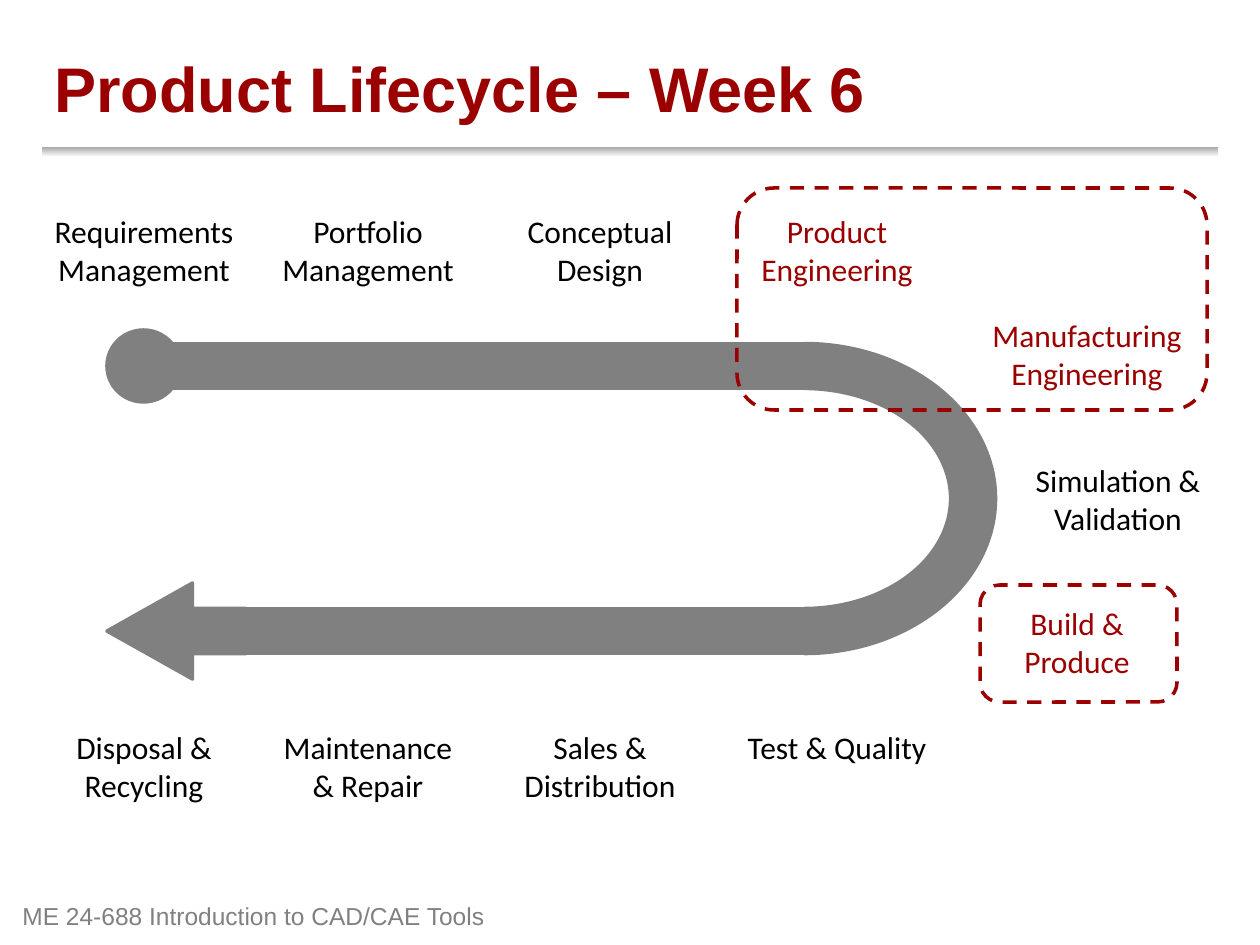
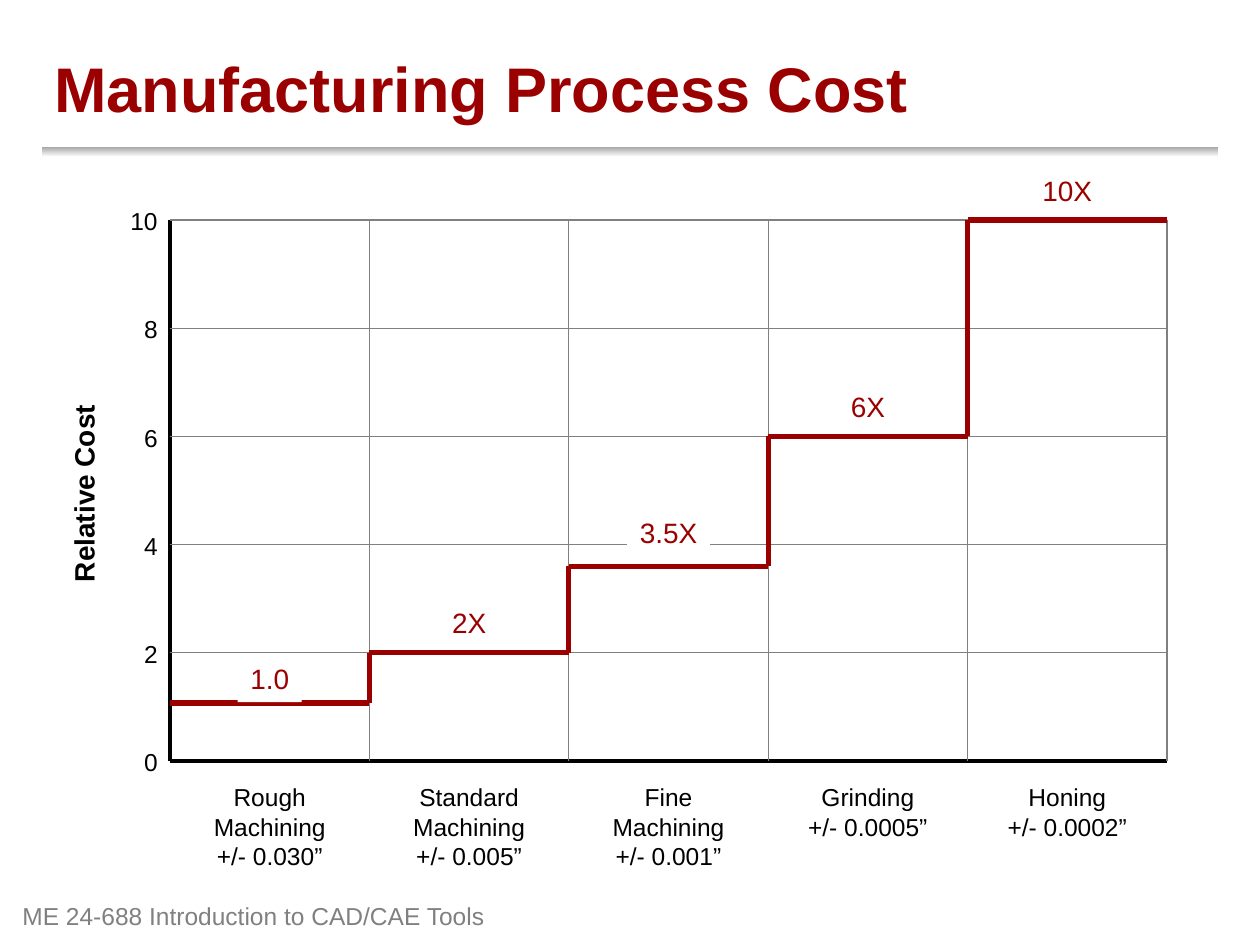
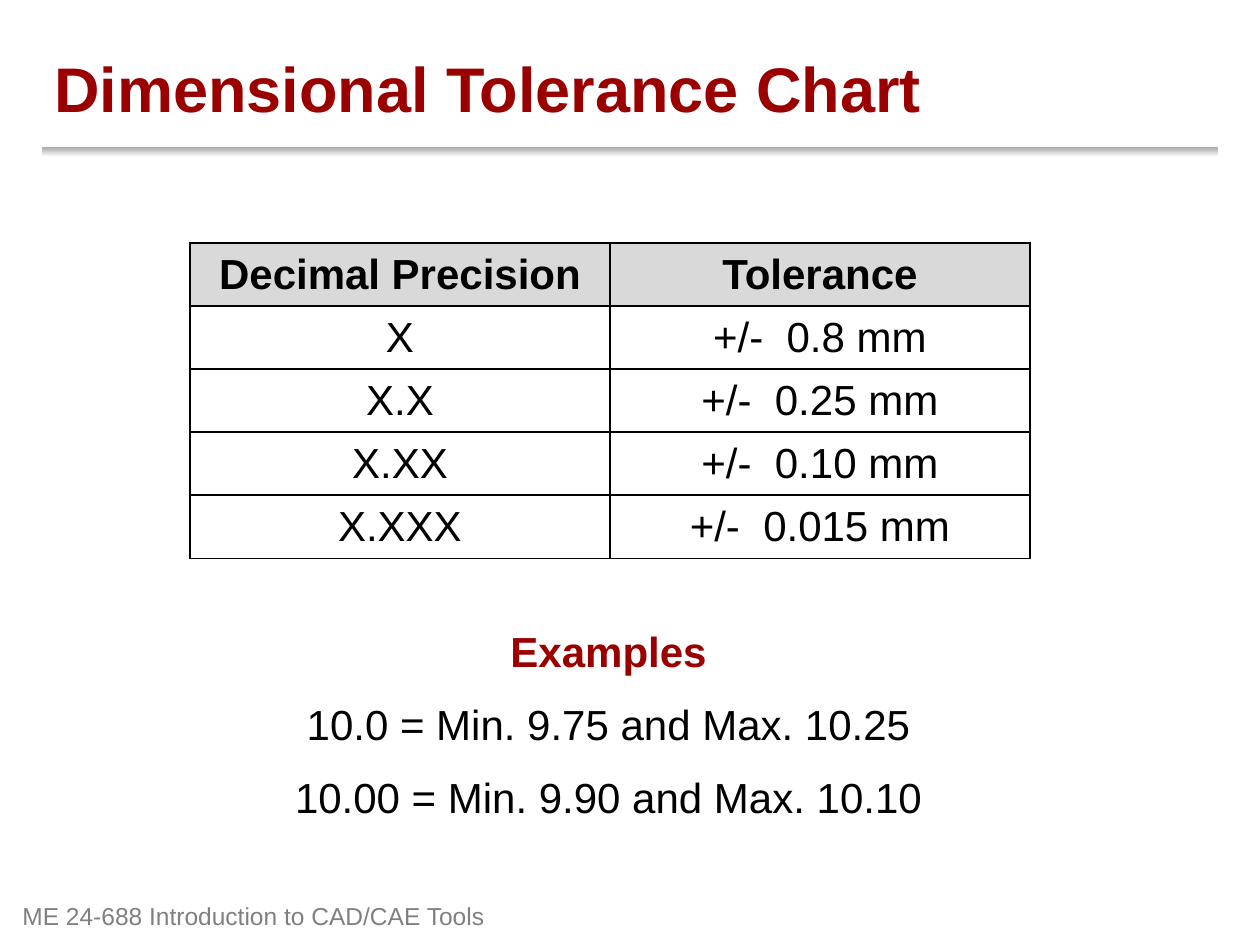
from collections import namedtuple

from lxml import etree
from pptx import Presentation
from pptx.dml.color import RGBColor
from pptx.enum.dml import MSO_LINE
from pptx.enum.shapes import MSO_CONNECTOR, MSO_SHAPE
from pptx.enum.text import MSO_ANCHOR, PP_ALIGN
from pptx.oxml.ns import qn
from pptx.util import Emu, Pt

RECTANGLE = MSO_SHAPE.RECTANGLE
ROUNDED = MSO_SHAPE.ROUNDED_RECTANGLE
OVAL = MSO_SHAPE.OVAL
BLOCK_ARC = MSO_SHAPE.BLOCK_ARC
RIGHT_ARROW = MSO_SHAPE.RIGHT_ARROW
STRAIGHT = MSO_CONNECTOR.STRAIGHT
DASH = MSO_LINE.DASH
LEFT, CENTER, RIGHT = PP_ALIGN.LEFT, PP_ALIGN.CENTER, PP_ALIGN.RIGHT
TOP, MIDDLE = MSO_ANCHOR.TOP, MSO_ANCHOR.MIDDLE

PX_PER_INCH = 126
RED, GRAY, BLACK, WHITE = "9A0000", "808080", "000000", "FFFFFF"
BAND_GRAY, HEADER_GRAY = "A6A6A6", "D9D9D9"

TITLE = {"name": "Arial", "size": Pt(36), "bold": True}
FOOTER = {"name": "Arial", "size": Pt(14)}
STAGE = {"name": "Calibri", "size": Pt(18)}
AXIS_TITLE = {"name": "Arial", "size": Pt(16), "bold": True}
AXIS_LABEL = {"name": "Arial", "size": Pt(14)}
COST_LABEL = {"name": "Arial", "size": Pt(16)}
BODY = {"name": "Arial", "size": Pt(24), "bold": False}
HEADING = {**BODY, "bold": True}

Box = namedtuple("Box", "left top width height")

STAGE_COLUMNS = (109, 333, 565, 802)
TOP_STAGES = (
    ("Requirements Management", BLACK),
    ("Portfolio Management", BLACK),
    ("Conceptual Design", BLACK),
    ("Product Engineering", RED),
)
BOTTOM_STAGES = (
    ("Disposal & Recycling", BLACK),
    ("Maintenance & Repair", BLACK),
    ("Sales & Distribution", BLACK),
    ("Test & Quality", BLACK),
)
SIDE_STAGES = (
    ("Manufacturing Engineering", RED, 1052, 123),
    ("Simulation & Validation", BLACK, 1083, 268),
    ("Build & Produce", RED, 1042, 411),
)
TRACK_PARTS = (
    (RECTANGLE, Box(101, 157, 667, 44), 0, ()),
    (OVAL, Box(72, 143, 73, 72), 0, ()),
    (RECTANGLE, Box(199, 422, 570, 44), 0, ()),
    (BLOCK_ARC, Box(614, 120, 310, 383), 90, (108, 215.91, 0.145)),
    (RIGHT_ARROW, Box(72, 396, 139, 96), 180, (0.47, 0.89)),
)
HIGHLIGHTS = (Box(702, 1, 470, 222), Box(945, 398, 197, 117))

PROCESSES = (
    ("Rough Machining\n+/- 0.030”", "1.0", 1.07, 64, 48),
    ("Standard Machining\n+/- 0.005”", "2X", 2, 60, 53),
    ("Fine Machining\n+/- 0.001”", "3.5X", 3.6, 83, 57),
    ("Grinding\n+/- 0.0005”", "6X", 6, 60, 53),
    ("Honing\n+/- 0.0002”", "10X", 10, 76, 53),
)
MAX_COST, COST_STEP = 10, 2

TOLERANCES = (
    ("Decimal Precision", "Tolerance"),
    ("X", "+/-  0.8 mm"),
    ("X.X", "+/-  0.25 mm"),
    ("X.XX", "+/-  0.10 mm"),
    ("X.XXX", "+/-  0.015 mm"),
)
EXAMPLES = (
    ("Examples", HEADING, RED),
    ("10.0 = Min. 9.75 and Max. 10.25", BODY, BLACK),
    ("10.00 = Min. 9.90 and Max. 10.10", BODY, BLACK),
)


def px(length):
    return Emu(round(length * 914400 / PX_PER_INCH))


def color(hex_value):
    return RGBColor.from_string(hex_value)


def place(box):
    return [px(length) for length in box]


def inside(outer, part):
    return part._replace(left=outer.left + part.left, top=outer.top + part.top)


def write(para, text, style, hex_value, align):
    para.alignment = align
    span = para.add_run()
    span.text = text
    for name, value in style.items():
        setattr(span.font, name, value)
    span.font.color.rgb = color(hex_value)


def add_text(page, box, text, style, hex_value=BLACK, align=CENTER, anchor=TOP, wrap=True):
    shape = page.shapes.add_textbox(*place(box))
    frame = shape.text_frame
    frame.word_wrap = wrap
    frame.vertical_anchor = anchor
    for index, line in enumerate(text.split("\n")):
        para = frame.add_paragraph() if index else frame.paragraphs[0]
        write(para, line, style, hex_value, align)
    return shape


def add_preset(page, kind, box, line=None):
    shape = page.shapes.add_shape(kind, *place(box))
    shape.shadow.inherit = False
    if line:
        shape.line.color.rgb = color(line)
        shape.line.width = Pt(2)
    else:
        shape.line.fill.background()
    return shape


def add_line(page, start, end, hex_value, width):
    line = page.shapes.add_connector(STRAIGHT, *place(start + end))
    line.line.color.rgb = color(hex_value)
    line.line.width = Pt(width)
    etree.SubElement(line._element.spPr, qn("a:effectLst"))


def add_page(deck, title):
    page = deck.slides.add_slide(deck.slide_layouts[6])
    add_text(page, Box(10, 895, 490, 43), "ME 24-688 Introduction to CAD/CAE Tools",
             FOOTER, GRAY, LEFT, wrap=False)
    band = add_preset(page, RECTANGLE, Box(42, 147, 1176, 10))
    band.fill.gradient()
    band.fill.gradient_angle = 270
    for stop, hex_value in zip(band.fill.gradient_stops, (BAND_GRAY, WHITE)):
        stop.color.rgb = color(hex_value)
    add_text(page, Box(42, 38, 1176, 98), title, TITLE, RED, LEFT, MIDDLE)
    return page


def draw_stage(page, box, text, hex_value, center, top):
    add_text(page, inside(box, Box(center - 110, top, 220, 89)), text, STAGE, hex_value)


def draw_lifecycle(page, box):
    for stages, top in ((TOP_STAGES, 19), (BOTTOM_STAGES, 535)):
        for (text, hex_value), center in zip(stages, STAGE_COLUMNS):
            draw_stage(page, box, text, hex_value, center, top)
    for stage in SIDE_STAGES:
        draw_stage(page, box, *stage)
    for kind, part, rotation, adjustments in TRACK_PARTS:
        shape = add_preset(page, kind, inside(box, part), GRAY)
        shape.fill.solid()
        shape.fill.fore_color.rgb = color(GRAY)
        shape.rotation = rotation
        for index, value in enumerate(adjustments):
            shape.adjustments[index] = value
    for part in HIGHLIGHTS:
        outline = add_preset(page, ROUNDED, inside(box, part), RED)
        outline.fill.background()
        outline.line.dash_style = DASH


def draw_cost_steps(page, box):
    right, bottom = box.left + box.width, box.top + box.height
    column = box.width / len(PROCESSES)

    def cost_y(cost):
        return bottom - cost * box.height / MAX_COST

    add_line(page, (box.left, box.top), (box.left, bottom), BLACK, 2.25)
    add_line(page, (box.left, bottom), (right, bottom), BLACK, 2.25)
    axis_title = add_text(page, Box(box.left - 188, box.top + 250, 204, 47),
                          "Relative Cost", AXIS_TITLE, wrap=False)
    axis_title.rotation = 270

    for cost in range(0, MAX_COST + 1, COST_STEP):
        y = cost_y(cost)
        add_text(page, Box(box.left - 110, y - 20, 110, 43), str(cost), AXIS_LABEL, align=RIGHT)
        if cost:
            add_line(page, (box.left, y), (right, y), GRAY, 0.75)
    for index in range(1, len(PROCESSES) + 1):
        x = box.left + index * column
        add_line(page, (x, bottom), (x, box.top), GRAY, 0.75)

    previous = None
    for index, (process, label, cost, width, rise) in enumerate(PROCESSES):
        x, y = box.left + index * column, cost_y(cost)
        center = x + column / 2
        add_text(page, Box(center - 90, bottom + 15, 180, 102), process, AXIS_LABEL)
        add_line(page, (x, y), (x + column, y), RED, 3)
        if previous is not None:
            add_line(page, (x, previous), (x, y), RED, 3)
        tag = add_text(page, Box(center - width / 2, y - rise, width, 47),
                       label, COST_LABEL, RED, wrap=False)
        tag.fill.solid()
        tag.fill.fore_color.rgb = color(WHITE)
        previous = y


def add_borders(cell):
    properties = cell._tc.get_or_add_tcPr()
    for side in ("lnL", "lnR", "lnT", "lnB"):
        border = etree.SubElement(properties, qn(f"a:{side}"), w=str(Pt(1)))
        fill = etree.SubElement(border, qn("a:solidFill"))
        etree.SubElement(fill, qn("a:srgbClr"), val=BLACK)


def draw_tolerances(page, box):
    table = page.shapes.add_table(len(TOLERANCES), len(TOLERANCES[0]), *place(box)).table
    table.first_row = table.horz_banding = False
    for row_index, row in enumerate(TOLERANCES):
        for column_index, text in enumerate(row):
            cell = table.cell(row_index, column_index)
            add_borders(cell)
            cell.vertical_anchor = MIDDLE
            if row_index:
                cell.fill.background()
            else:
                cell.fill.solid()
                cell.fill.fore_color.rgb = color(HEADER_GRAY)
            style = BODY if row_index else HEADING
            write(cell.text_frame.paragraphs[0], text, style, BLACK, CENTER)


def draw_examples(page, box):
    frame = page.shapes.add_textbox(*place(box)).text_frame
    frame.word_wrap = False
    for index, (text, style, hex_value) in enumerate(EXAMPLES):
        para = frame.add_paragraph() if index else frame.paragraphs[0]
        if index:
            para.space_before = Pt(13)
        write(para, text, style, hex_value, CENTER)


def main():
    deck = Presentation()
    deck.slide_width, deck.slide_height = px(1260), px(945)
    draw_lifecycle(add_page(deck, "Product Lifecycle – Week 6"), Box(35, 187, 1173, 624))
    draw_cost_steps(add_page(deck, "Manufacturing Process Cost"), Box(170, 220, 997, 541))
    page = add_page(deck, "Dimensional Tolerance Chart")
    draw_tolerances(page, Box(190, 243, 840, 295))
    draw_examples(page, Box(279, 619, 659, 208))
    deck.save("out.pptx")


if __name__ == "__main__":
    main()
